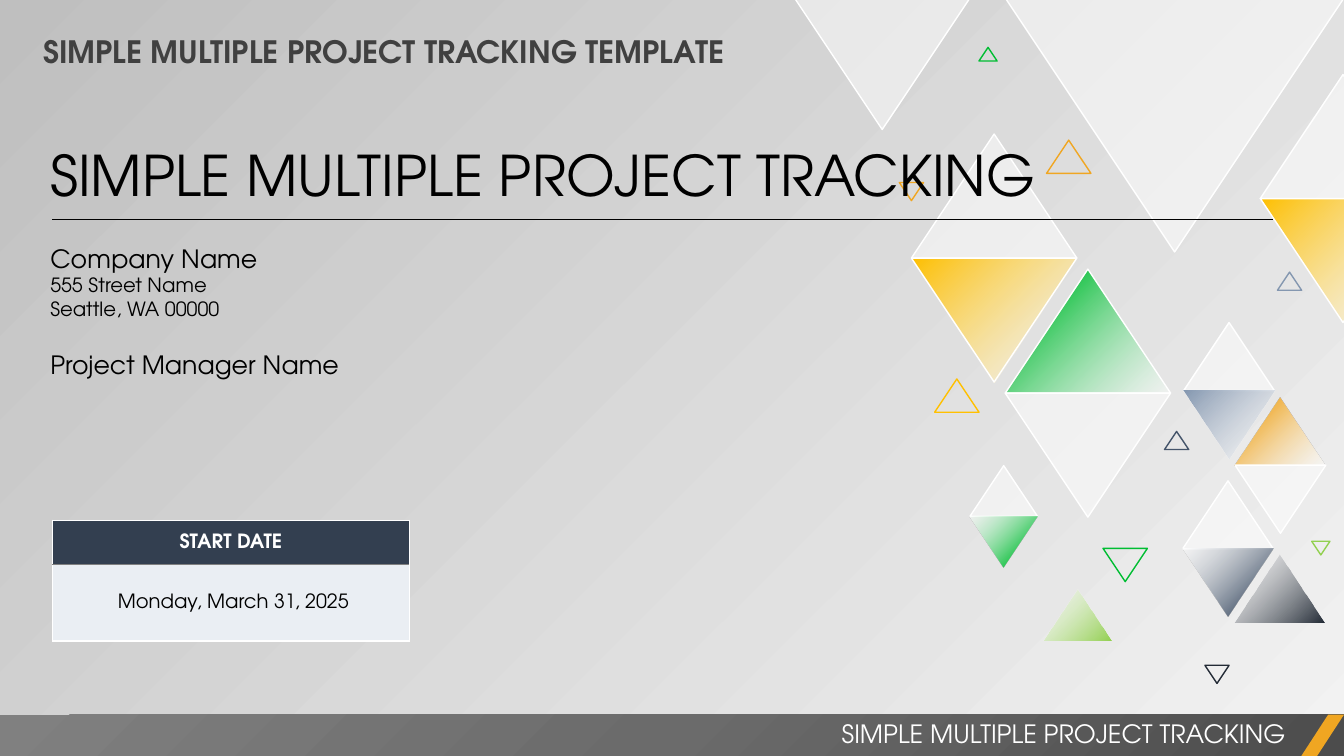
from lxml import etree
from pptx import Presentation
from pptx import util as u
from pptx.dml.color import RGBColor
from pptx.enum import shapes, text
from pptx.oxml.ns import qn

WHITE = RGBColor(0xFF, 0xFF, 0xFF)
BLACK = RGBColor(0x00, 0x00, 0x00)
GOLD = RGBColor(0xFF, 0xC0, 0x00)
ORANGE = RGBColor(0xF0, 0xA6, 0x22)
GREEN = RGBColor(0x00, 0xBD, 0x32)
LIME = RGBColor(0x92, 0xD0, 0x50)
STEEL = RGBColor(0x84, 0x97, 0xB0)
SLATE = RGBColor(0x44, 0x54, 0x6A)
INK = RGBColor(0x22, 0x2A, 0x35)
NAVY = RGBColor(0x33, 0x3F, 0x50)
MIST = RGBColor(0xEA, 0xEE, 0xF3)
CHAR = RGBColor(0x40, 0x40, 0x40)
GRAY = RGBColor(0x80, 0x80, 0x80)
MID = RGBColor(0x6B, 0x6B, 0x6B)
DARK = RGBColor(0x4C, 0x4C, 0x4C)
PALE = RGBColor(0xF2, 0xF2, 0xF2)
SILVER = RGBColor(0xBF, 0xBF, 0xBF)

CLEAR = (0, WHITE, 50)
FADE = (100, WHITE, 50)
LEFT, MIDDLE, RIGHT = text.PP_ALIGN.LEFT, text.PP_ALIGN.CENTER, text.PP_ALIGN.RIGHT
TITLE = "SIMPLE MULTIPLE PROJECT TRACKING"

# left, top, width of each pair; True if the tinted half points up; its stops
PAIRS = [
    (9.04, 1.33, 1.64, False, [(0, GOLD), FADE]),
    (9.97, 2.67, 1.64, True, [CLEAR, (82, GREEN)]),
    (11.73, 4.77, 0.9, False, [CLEAR, (82, SLATE)]),
    (11.74, 3.2, 0.9, False, [(0, STEEL), FADE]),
    (12.25, 3.94, 0.9, True, [CLEAR, (82, ORANGE)]),
    (9.62, 4.62, 0.67, False, [CLEAR, (82, GREEN)]),
    (12.5, 0.74, 1.64, False, [(0, GOLD), FADE]),
]
# left, top, width, points up, stops (None for plain white)
SINGLES = [
    (9.97, -0.02, 3.36, False, None),
    (7.88, -0.02, 1.74, False, None),
    (12.24, 5.5, 0.9, True, [(0, INK), FADE]),
    (10.35, 5.85, 0.67, True, [(0, LIME), FADE]),
]
# left, top, width, points up, line colour
HOLLOW = [
    (10.94, 5.44, 0.44, False, GREEN),
    (9.27, 3.76, 0.44, True, GOLD),
    (11.55, 4.28, 0.24, True, SLATE),
    (11.95, 6.6, 0.24, False, INK),
    (8.92, 1.81, 0.24, False, ORANGE),
    (12.67, 2.7, 0.24, True, STEEL),
    (9.71, 0.47, 0.18, True, GREEN),
    (13.01, 5.37, 0.18, False, LIME),
    (10.38, 1.39, 0.44, True, ORANGE),
]


def node(base, tag, **attrs):
    return etree.SubElement(base, qn(tag), {k: str(v) for k, v in attrs.items()})


def tone(base, color, alpha=100):
    """Add a colour, with its opacity in percent, to an XML parent."""
    item = node(base, "a:srgbClr", val=color)
    if alpha < 100:
        node(item, "a:alpha", val=alpha * 1000)


def blend(fill, root, stops, round_fill=False):
    """Give a fill the stops, toward the top left or out of the bottom right."""
    fill.gradient()
    grad = root.find(".//" + qn("a:gradFill"))
    for child in list(grad):
        grad.remove(child)
    steps = node(grad, "a:gsLst")
    for pos, *shade in stops:
        tone(node(steps, "a:gs", pos=pos * 1000), *shade)
    if round_fill:
        way = node(grad, "a:path", path="circle")
        node(way, "a:fillToRect", l=100000, t=100000)
    else:
        node(grad, "a:lin", ang=225 * 60000, scaled=0)


def write(frame, words, first=False, size=14, color=BLACK, bold=False,
          align=LEFT, before=0, font="TeX Gyre Adventor"):
    """Write one paragraph into a text frame."""
    para = frame.paragraphs[0] if first else frame.add_paragraph()
    para.alignment, para.space_before = align, u.Pt(before)
    run = para.add_run()
    run.text = words
    run.font.name, run.font.size = font, u.Pt(size)
    run.font.bold, run.font.color.rgb = bold, color


class Deck:
    def __init__(self, wide, high):
        self.show = Presentation()
        self.show.slide_width, self.show.slide_height = u.Inches(wide), u.Inches(high)
        self.slide = self.show.slides.add_slide(self.show.slide_layouts[6])
        self.items = self.slide.shapes

    def ground(self, stops):
        blend(self.slide.background.fill, self.slide._element, stops)

    def shape(self, kind, *box):
        item = self.items.add_shape(kind, *map(u.Inches, box))
        item.shadow.inherit = False
        item.line.fill.background()
        return item

    def wedge(self, left, top, wide, up, stops=None, edge=None, hollow=False):
        """Draw a triangle whose height is three quarters of its width."""
        item = self.shape(shapes.MSO_SHAPE.ISOSCELES_TRIANGLE, left, top, wide, wide * 0.75)
        item.rotation = 0 if up else 180
        if hollow:
            item.fill.background()
        else:
            blend(item.fill, item._element, stops or [CLEAR, FADE])
            if stops is None or wide > 1:
                edge = WHITE
        if edge is not None:
            item.line.color.rgb, item.line.width = edge, u.Pt(1)

    def pair(self, left, top, wide, tint_up, stops):
        self.wedge(left, top, wide, True, stops if tint_up else None)
        self.wedge(left, top + wide * 0.75, wide, False, None if tint_up else stops)

    def label(self, box, *lines):
        frame = self.items.add_textbox(*map(u.Inches, box)).text_frame
        frame.word_wrap = True
        frame.auto_size = text.MSO_AUTO_SIZE.SHAPE_TO_FIT_TEXT
        for spot, (words, form) in enumerate(lines):
            write(frame, words, first=spot == 0, **form)

    def rule(self, left, right, top, color, width):
        ends = map(u.Inches, (left, top, right, top))
        line = self.items.add_connector(shapes.MSO_CONNECTOR.STRAIGHT, *ends)
        line.line.color.rgb, line.line.width = color, u.Pt(width)
        node(line._element.spPr, "a:effectLst")

    def table(self, left, top, wide, rows):
        high = sum(row[0] for row in rows)
        box = map(u.Inches, (left, top, wide, high))
        table = self.items.add_table(len(rows), 1, *box).table
        table.first_row = table.horz_banding = False
        for spot, (tall, fill, inset, words, form) in enumerate(rows):
            table.rows[spot].height = u.Inches(tall)
            cell = table.cell(spot, 0)
            cell.margin_left, cell.margin_bottom = u.Inches(inset), 0
            cell.margin_right = cell.margin_top = u.Inches(0.01)
            cell.vertical_anchor = text.MSO_ANCHOR.MIDDLE
            for side in "LRTB":
                edge = node(cell._tc.get_or_add_tcPr(), "a:ln" + side, w=u.Pt(1))
                tone(node(edge, "a:solidFill"), WHITE)
            cell.fill.solid()
            cell.fill.fore_color.rgb = fill
            write(cell.text_frame, words, first=True, align=MIDDLE, **form)


def main():
    deck = Deck(13.33, 7.5)
    deck.ground([(0, PALE, 40), (100, SILVER)])
    for spec_row in PAIRS:
        deck.pair(*spec_row)
    for row in SINGLES:
        deck.wedge(*row)
    for left, top, wide, up, edge in HOLLOW:
        deck.wedge(left, top, wide, up, edge=edge, hollow=True)

    deck.label((0.33, 0.28, 8.61, 0.47),
               (TITLE + " TEMPLATE", dict(size=22, color=CHAR, bold=True)))

    band = deck.shape(shapes.MSO_SHAPE.RECTANGLE, 0, 7.09, 13.33, 0.42)
    blend(band.fill, band._element, [(0, DARK), (50, MID), (100, GRAY)], round_fill=True)
    slash = deck.shape(shapes.MSO_SHAPE.PARALLELOGRAM, 12.9, 7.09, 0.43, 0.42)
    slash.adjustments[0] = 0.65
    slash.fill.solid()
    slash.fill.fore_color.rgb = ORANGE
    deck.label((5.25, 7.08, 7.6, 0.4), (TITLE, dict(size=18, color=WHITE, align=RIGHT)))

    deck.label((0.4, 1.35, 12.27, 0.77), (TITLE, dict(size=40)))
    deck.rule(0.52, 12.63, 2.18, BLACK, 0.5)
    deck.label((0.4, 2.36, 4.39, 1.48),
               ("Company Name", dict(size=18)),
               ("555 Street Name", {}),
               ("Seattle, WA 00000", {}),
               ("Project Manager Name", dict(size=18, before=21)))

    deck.table(0.52, 5.16, 3.54, [
        (0.44, NAVY, 0.01, "START DATE", dict(color=WHITE, bold=True)),
        (0.76, MIST, 0.06, "Monday, March 31, 2025", {}),
    ])
    deck.rule(0.52, 4.06, 5.6, GRAY, 1)
    deck.show.save("out.pptx")


if __name__ == "__main__":
    main()
